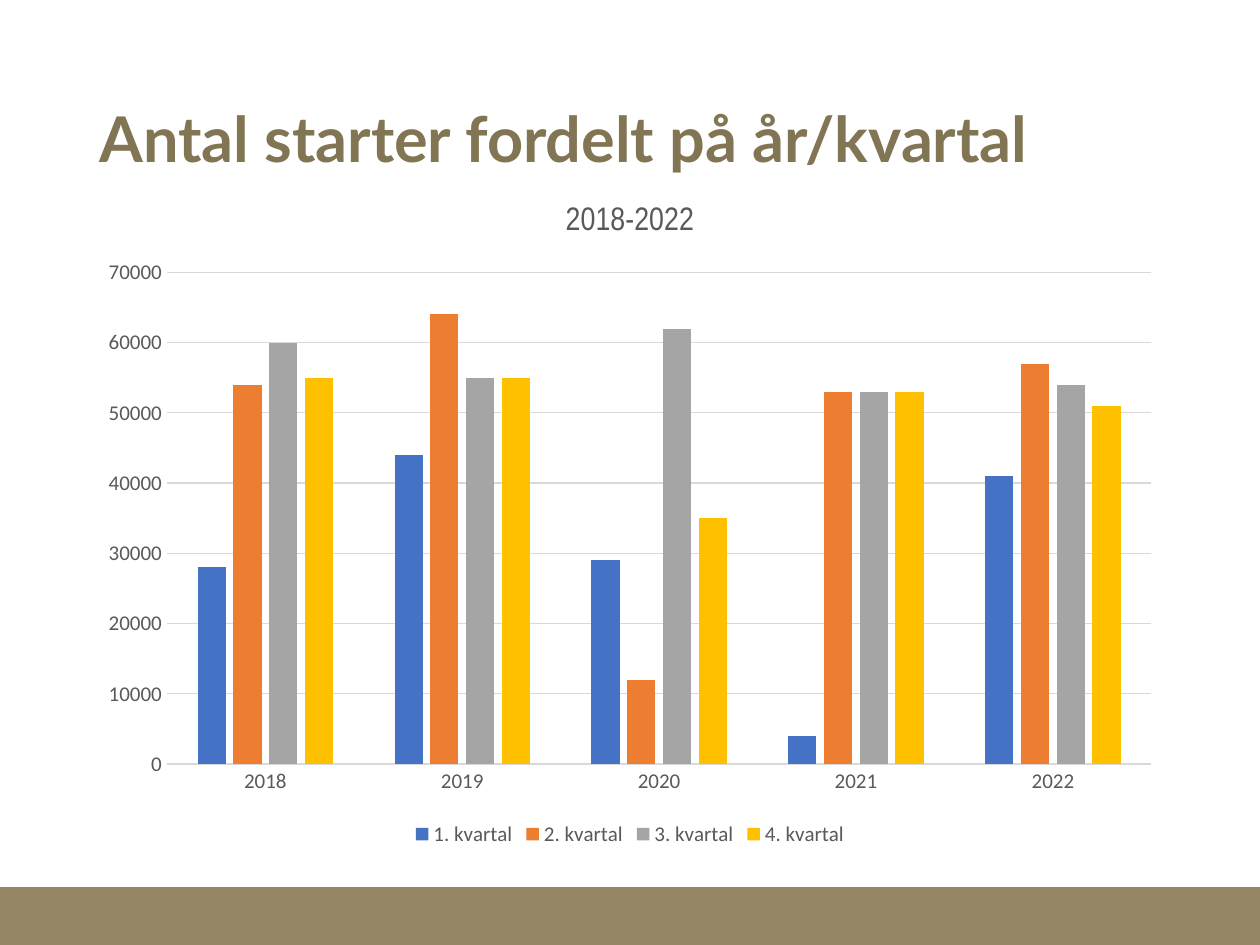
from pptx import Presentation
from pptx.chart.data import CategoryChartData
from pptx.dml.color import RGBColor
from pptx.enum.chart import XL_CHART_TYPE as ChartType
from pptx.enum.chart import XL_LEGEND_POSITION as LegendPosition
from pptx.enum.chart import XL_TICK_MARK as TickMark
from pptx.enum.shapes import MSO_SHAPE as Shape
from pptx.enum.text import MSO_ANCHOR as Anchor
from pptx.enum.text import PP_ALIGN as Align
from pptx.util import Inches, Pt

# Content
TITLE = "Antal starter fordelt på år/kvartal"
CHART_TITLE = "2018-2022"
YEARS = ["2018", "2019", "2020", "2021", "2022"]
QUARTERS = [
    ("1. kvartal", "4472C4", [28000, 44000, 29000, 4000, 41000]),
    ("2. kvartal", "ED7D31", [54000, 64000, 12000, 53000, 57000]),
    ("3. kvartal", "A5A5A5", [60000, 55000, 62000, 53000, 54000]),
    ("4. kvartal", "FFC000", [55000, 55000, 35000, 53000, 51000]),
]

# Formats and layout, in inches
GREY, GRID = "595959", "D9D9D9"
TITLE_FONT = {"name": "Lato", "size": Pt(36), "bold": True}
CHART_TITLE_FONT = {"name": "Arial Narrow", "size": Pt(18.6), "bold": False}
LABEL_FONT = {"name": "Calibri", "size": Pt(12), "bold": False}
WIDTH, HEIGHT = 10, 7.5
MARGIN = 0.69
CONTENT_WIDTH = WIDTH - 2 * MARGIN
BAND_HEIGHT = 0.46


def color(hex_value):
    return RGBColor.from_string(hex_value)


def box(*lengths):
    return [Inches(length) for length in lengths]


def style_font(font, formats, hex_value):
    for name, value in formats.items():
        setattr(font, name, value)
    font.color.rgb = color(hex_value)


def style_line(line):
    line.color.rgb = color(GRID)
    line.width = Pt(0.75)


def add_band(slide):
    band = slide.shapes.add_shape(
        Shape.RECTANGLE, *box(0, HEIGHT - BAND_HEIGHT, WIDTH, BAND_HEIGHT))
    band.shadow.inherit = False
    band.fill.solid()
    band.fill.fore_color.rgb = color("958766")
    band.line.fill.background()


def add_title(slide):
    title = slide.shapes.title
    title.left, title.top, title.width, title.height = box(
        MARGIN, 0.4, CONTENT_WIDTH, 1.45)
    title.text_frame.text = TITLE
    title.text_frame.vertical_anchor = Anchor.MIDDLE
    paragraph = title.text_frame.paragraphs[0]
    paragraph.alignment = Align.LEFT
    paragraph.line_spacing = 0.9
    style_font(paragraph.runs[0].font, TITLE_FONT, "827553")


def add_quarter_chart(slide):
    data = CategoryChartData()
    data.categories = YEARS
    for name, _, values in QUARTERS:
        data.add_series(name, values)
    chart = slide.shapes.add_chart(
        ChartType.COLUMN_CLUSTERED, *box(MARGIN, 1.4, CONTENT_WIDTH, 5.36),
        data).chart
    chart.font.name, chart.font.size = "Calibri", Pt(10)

    # Chart title and legend
    chart.has_title = True
    chart.chart_title.include_in_layout = False
    chart.chart_title.text_frame.text = CHART_TITLE
    title_run = chart.chart_title.text_frame.paragraphs[0].runs[0]
    style_font(title_run.font, CHART_TITLE_FONT, GREY)
    chart.has_legend = True
    chart.legend.position = LegendPosition.BOTTOM
    chart.legend.include_in_layout = False
    style_font(chart.legend.font, LABEL_FONT, GREY)

    # Columns
    plot = chart.plots[0]
    plot.gap_width, plot.overlap = 219, -27
    plot.vary_by_categories = False
    for series, (_, fill, _) in zip(plot.series, QUARTERS):
        series.format.fill.solid()
        series.format.fill.fore_color.rgb = color(fill)

    # Axes
    for axis in (chart.category_axis, chart.value_axis):
        axis.major_tick_mark = axis.minor_tick_mark = TickMark.NONE
        style_font(axis.tick_labels.font, LABEL_FONT, GREY)
    style_line(chart.category_axis.format.line)
    value_axis = chart.value_axis
    value_axis.minimum_scale, value_axis.maximum_scale = 0, 70000
    value_axis.major_unit = 10000
    value_axis.format.line.fill.background()
    value_axis.has_major_gridlines = True
    style_line(value_axis.major_gridlines.format.line)


def main():
    presentation = Presentation()
    presentation.slide_width, presentation.slide_height = box(WIDTH, HEIGHT)
    slide = presentation.slides.add_slide(presentation.slide_layouts[5])
    add_band(slide)
    add_title(slide)
    add_quarter_chart(slide)
    presentation.save("out.pptx")


if __name__ == "__main__":
    main()
